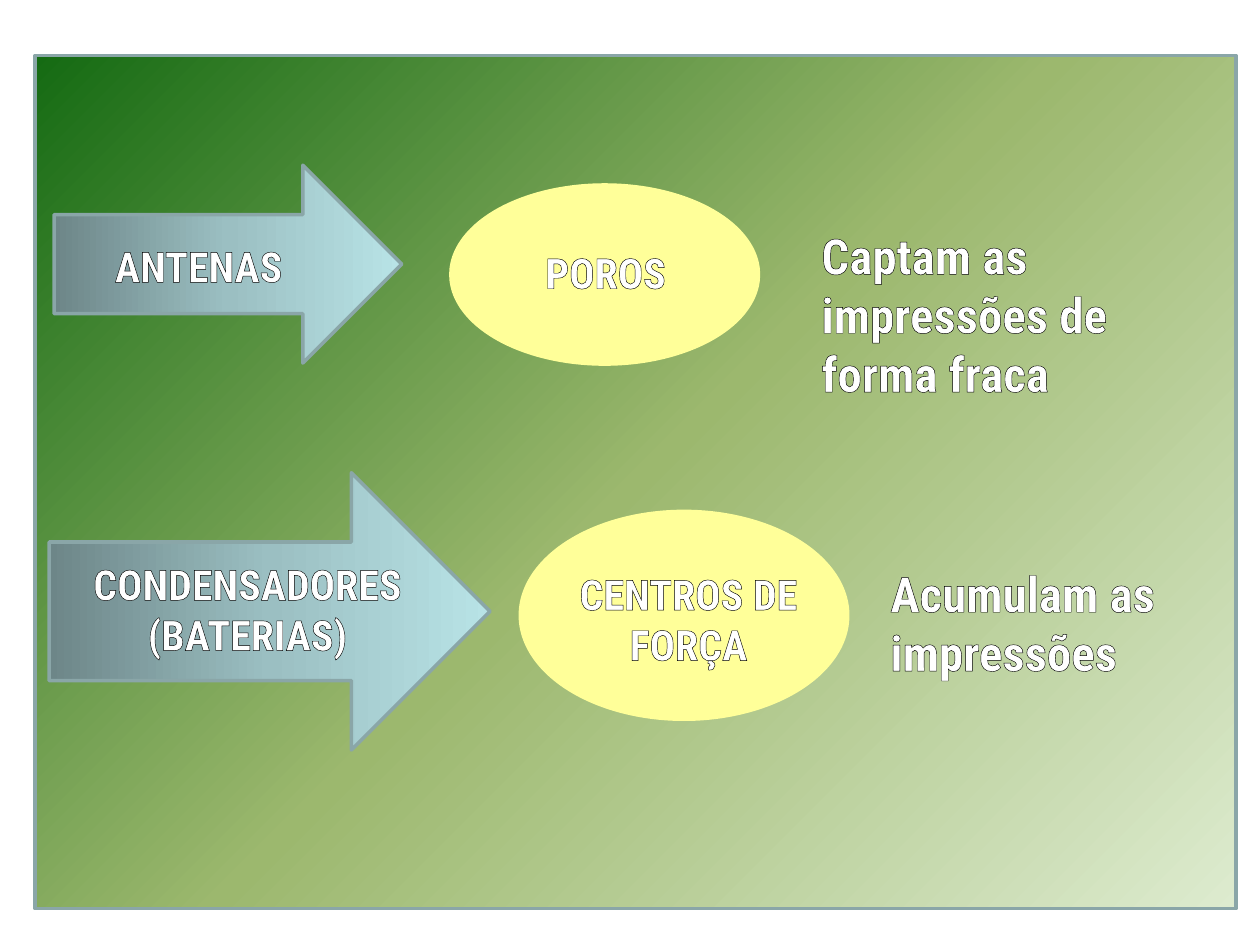
from copy import deepcopy

from lxml import etree
from pptx import Presentation
from pptx.dml.color import RGBColor
from pptx.enum.shapes import MSO_SHAPE
from pptx.enum.text import MSO_AUTO_SIZE, PP_ALIGN
from pptx.oxml.ns import qn
from pptx.util import Cm, Pt

RECT, ARROW, OVAL = MSO_SHAPE.RECTANGLE, MSO_SHAPE.RIGHT_ARROW, MSO_SHAPE.OVAL
LEFT, CENTER = PP_ALIGN.LEFT, PP_ALIGN.CENTER
GROW = MSO_AUTO_SIZE.SHAPE_TO_FIT_TEXT

FONT = "Roboto Condensed"
COLORS = {
    "edge": "8AA6A8", "oval": "FFFF99", "text": "FFFFFF", "outline": "000000",
    "pale": "DDEBCF", "olive": "9CB86E", "green": "156B13",
    "slate": "6D8688", "teal": "9BBFC2", "sky": "B8E3E6",
}


def color(name):
    return RGBColor.from_string(COLORS[name])


def write(frame, text, size=24, bold=True, align=CENTER, fill="text", outline="outline"):
    """Put one paragraph of outlined text in a frame."""
    par = frame.paragraphs[0]
    par.alignment = align
    run = par.add_run()
    run.text = text
    font = run.font
    font.name, font.size, font.bold = FONT, Pt(size), bold
    font.color.rgb = color(fill)
    line = etree.Element(qn("a:ln"), w=str(Pt(0.75)))
    solid = etree.SubElement(line, qn("a:solidFill"))
    etree.SubElement(solid, qn("a:srgbClr"), val=COLORS[outline])
    run.font._element.insert(0, line)


class Deck:
    """Holds the style and the current slide."""

    def __init__(self, width, height):
        self.prs = Presentation()
        self.prs.slide_width, self.prs.slide_height = Cm(width), Cm(height)
        self.slide = self.prs.slides.add_slide(self.prs.slide_layouts[6])
        self.shapes = self.slide.shapes

    def shape(self, kind, box, edge, home=None):
        item = (home or self.shapes).add_shape(kind, *map(Cm, box))
        item.shadow.inherit = False
        item.line.color.rgb = color(edge)
        item.line.width = Pt(2)
        return item

    def blend(self, item, names, angle):
        """Fill with evenly spaced stops; the angle runs counter-clockwise."""
        fill = item.fill
        fill.gradient()
        fill.gradient_angle = angle
        stops = item.element.spPr.find(".//" + qn("a:gsLst"))
        while len(stops) < len(names):
            stops.append(deepcopy(stops[0]))
        for i, (stop, name) in enumerate(zip(fill.gradient_stops, names)):
            stop.color.rgb = color(name)
            stop.position = i / (len(names) - 1)

    def panel(self, box):
        self.blend(self.shape(RECT, box, "edge"), ("pale", "olive", "green"), 135)

    def arrow(self, box, home=None):
        item = self.shape(ARROW, box, "edge", home)
        self.blend(item, ("slate", "teal", "sky"), 0)

    def oval(self, box):
        item = self.shape(OVAL, box, "oval")
        item.fill.solid()
        item.fill.fore_color.rgb = color("oval")

    def label(self, text, box, home=None, **form):
        frame = (home or self.shapes).add_textbox(*map(Cm, box)).text_frame
        frame.word_wrap = True
        frame.auto_size = GROW
        write(frame, text, **form)

    def group(self):
        return self.shapes.add_group_shape().shapes

    def save(self):
        self.prs.save("out.pptx")


def main():
    deck = Deck(25.4, 19.05)
    deck.panel((0.71, 1.12, 24.21, 17.2))

    deck.arrow((1.09, 3.33, 7.01, 3.99))
    deck.label("ANTENAS", (1.3, 4.72, 5.41, 1.27))
    deck.oval((9.09, 3.73, 6.2, 3.61))
    deck.label("POROS", (9.91, 4.85, 4.6, 1.27))
    deck.label("Captam as impressões de forma fraca", (16.31, 4.42, 8.61, 3.84),
               size=28, align=LEFT)

    group = deck.group()
    deck.arrow((0.99, 9.53, 8.89, 5.59), group)
    deck.label("CONDENSADORES (BATERIAS)", (0.89, 11.13, 8.2, 2.31), group)
    deck.oval((10.49, 10.31, 6.6, 4.19))
    deck.label("CENTROS DE FORÇA", (11.25, 11.33, 5.26, 2.31))
    deck.label("Acumulam as impressões", (17.7, 11.23, 6.2, 2.64),
               size=28, align=LEFT)

    deck.save()


if __name__ == "__main__":
    main()
